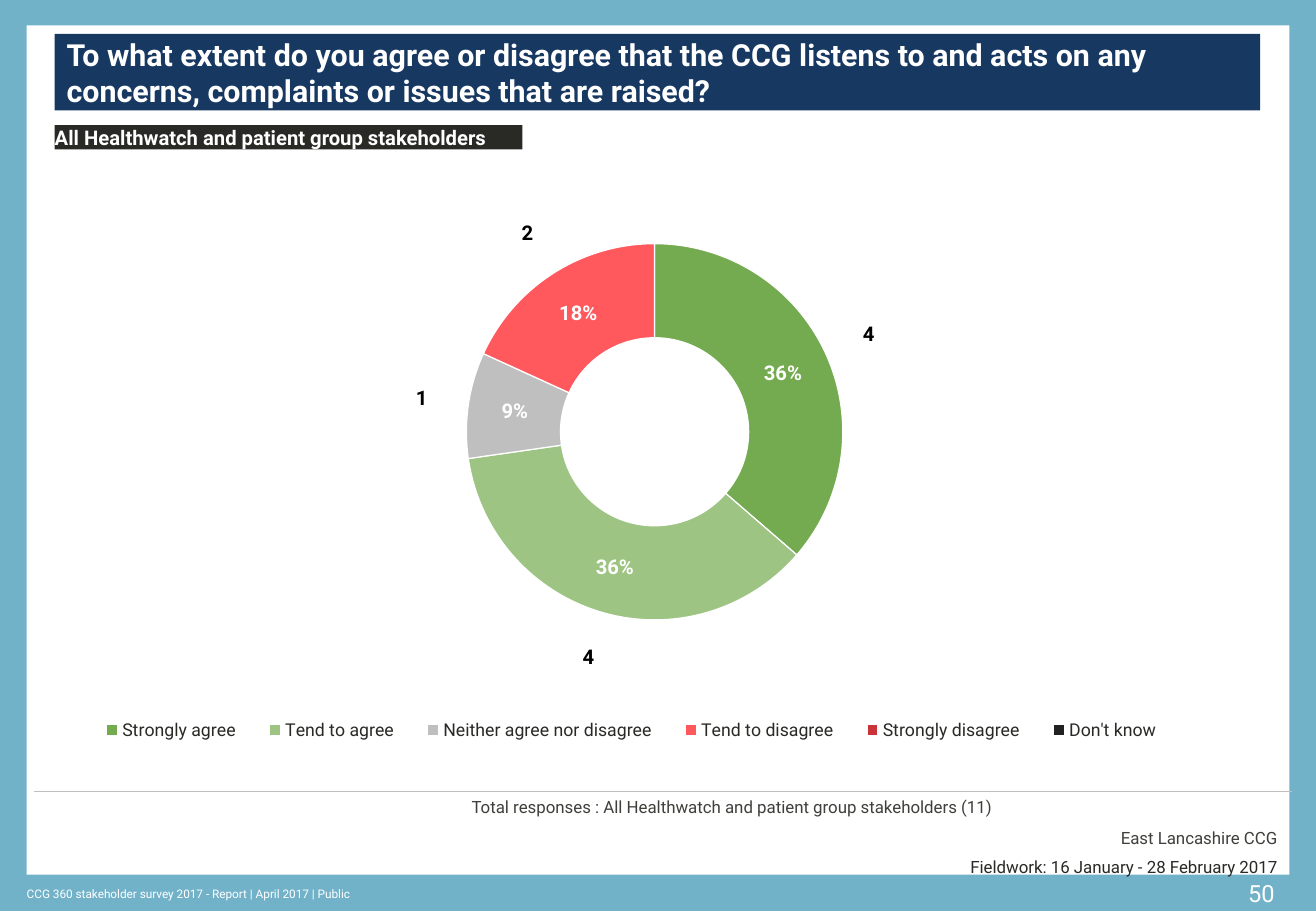
"""Build the survey slide with its ring chart of stakeholder views."""
from dataclasses import dataclass

from lxml import etree
from pptx import Presentation, util as u
from pptx.chart import data as cd
from pptx.dml import color
from pptx.enum import chart as ch, shapes, text
from pptx.oxml import ns


@dataclass(frozen=True)
class Theme:
    font: str = "Roboto"
    sky: str = "71B2C9"
    navy: str = "173861"
    white: str = "FFFFFF"
    black: str = "000000"
    ink: str = "292926"
    soft: str = "3F3F3B"
    rule: str = "BFBFBF"
    title: float = 18
    page: float = 14
    label: float = 12
    head: float = 12
    key: float = 10.5
    note: float = 10
    foot: float = 7


T = Theme()
VIEWS = [
    ("Strongly agree", 36, 4, "74AA50"),
    ("Tend to agree", 36, 4, "9DC482"),
    ("Neither agree nor disagree", 9, 1, "BFBFBF"),
    ("Tend to disagree", 18, 2, "FF585D"),
    ("Strongly disagree", 0, 0, "CB333B"),
    ("Don't know", 0, 0, "222223"),
]


def box(at):
    return [u.Inches(n) for n in at]


def paint(fill, hue):
    fill.solid()
    fill.fore_color.rgb = color.RGBColor.from_string(hue)


def style(font, size, hue, bold=False):
    font.name, font.size, font.bold = T.font, u.Pt(size), bold
    font.color.rgb = color.RGBColor.from_string(hue)


def write(shape, words, size, hue, bold=False, right=False, inset=None,
          middle=False, wrap=True):
    frame = shape.text_frame
    frame.word_wrap = wrap
    frame.vertical_anchor = text.MSO_ANCHOR.MIDDLE if middle else text.MSO_ANCHOR.TOP
    if inset is not None:
        frame.margin_left = frame.margin_right = u.Inches(inset)
        frame.margin_top = frame.margin_bottom = u.Inches(inset)
    para = frame.paragraphs[0]
    para.text = words
    para.alignment = text.PP_ALIGN.RIGHT if right else text.PP_ALIGN.LEFT
    style(para.font, size, hue, bold)


def block(slide, at, hue):
    shape = slide.shapes.add_shape(shapes.MSO_SHAPE.RECTANGLE, *box(at))
    shape.shadow.inherit = False
    paint(shape.fill, hue)
    shape.line.fill.background()
    return shape


def label(slide, at, words, size, hue, **opts):
    write(slide.shapes.add_textbox(*box(at)), words, size, hue, **opts)


def rule(slide, x1, x2, y):
    line = slide.shapes.add_connector(shapes.MSO_CONNECTOR.STRAIGHT, *box((x1, y, x2, y)))
    line.line.width = u.Pt(0.25)
    paint(line.line.fill, T.rule)
    etree.SubElement(line._element.spPr, ns.qn("a:effectLst"))


def place(part, index, at, inner=False):
    for old in part.findall(ns.qn("c:layout")):
        part.remove(old)
    layout = etree.Element(ns.qn("c:layout"))
    manual = etree.SubElement(layout, ns.qn("c:manualLayout"))
    items = [("layoutTarget", "inner")] if inner else []
    items += [("xMode", "edge"), ("yMode", "edge"), *zip("xywh", at)]
    for name, val in items:
        etree.SubElement(manual, ns.qn("c:" + name)).set("val", str(val))
    part.insert(index, layout)


def tag(series, form, hue):
    labels = series.data_labels
    labels.show_value = True
    labels.number_format, labels.number_format_is_linked = form, False
    style(labels.font, T.label, hue, True)


def ring(slide, at):
    names, shares, counts, hues = zip(*VIEWS)
    data = cd.CategoryChartData()
    data.categories = names
    data.add_series("Series 1", shares)
    data.add_series("Series 2", counts)
    chart = slide.shapes.add_chart(ch.XL_CHART_TYPE.DOUGHNUT, *box(at), data).chart
    chart.has_title = False
    style(chart.font, T.title, T.ink)
    chart.has_legend = True
    key = chart.legend
    key.position = ch.XL_LEGEND_POSITION.BOTTOM
    key.include_in_layout = False
    style(key.font, T.key, T.ink)
    place(key._element, 1, (0.06, 0.87, 0.84, 0.07))
    plot = chart.plots[0]
    plot.vary_by_categories = True
    place(plot._element.getparent(), 0, (0.283, 0, 0.429, 0.881), inner=True)
    plot._element.find(ns.qn("c:holeSize")).set("val", "38")
    share, count = plot.series
    for i, hue in enumerate(hues):
        wedge = share.points[i].format
        paint(wedge.fill, hue)
        paint(wedge.line.fill, T.white)
        wedge.line.width = u.Pt(0.75)
        blank = count.points[i].format
        blank.fill.background()
        blank.line.fill.background()
    tag(share, '0"%";;', T.white)
    tag(count, "0;;", T.black)


def main():
    deck = Presentation()
    deck.slide_width, deck.slide_height = u.Inches(10.83), u.Inches(7.5)
    slide = deck.slides.add_slide(deck.slide_layouts[6])
    paint(slide.background.fill, T.sky)
    block(slide, (0.22, 0.21, 10.39, 6.99), T.white)
    label(slide, (10.15, 7.19, 0.44, 0.34), "50", T.page, T.white,
          right=True, wrap=False)
    label(slide, (0.22, 7.26, 5.35, 0.2),
          "CCG 360 stakeholder survey 2017 - Report | April 2017 | Public",
          T.foot, T.white, inset=0, middle=True)
    rule(slide, 0.28, 10.63, 6.51)
    ring(slide, (0, 1.23, 10.83, 5.28))
    write(block(slide, (0.45, 0.28, 9.92, 0.63), T.navy),
          "To what extent do you agree or disagree that the CCG listens to and acts "
          "on any concerns, complaints or issues that are raised?",
          T.title, T.white, bold=True, middle=True)
    write(block(slide, (0.45, 1.03, 3.85, 0.2), T.ink),
          "All Healthwatch and patient group stakeholders",
          T.head, T.white, bold=True, inset=0, middle=True)
    notes = [
        (3.16, 6.56, 5, "Total responses : All Healthwatch and patient group stakeholders (11)", T.soft),
        (7.62, 6.81, 2.89, "East Lancashire CCG", T.soft),
        (7.62, 7.05, 2.89, "Fieldwork: 16 January - 28 February 2017", T.ink),
    ]
    for left, top, width, words, hue in notes:
        label(slide, (left, top, width, 0.17), words, T.note, hue, right=True, inset=0)
    deck.save("out.pptx")


if __name__ == "__main__":
    main()
